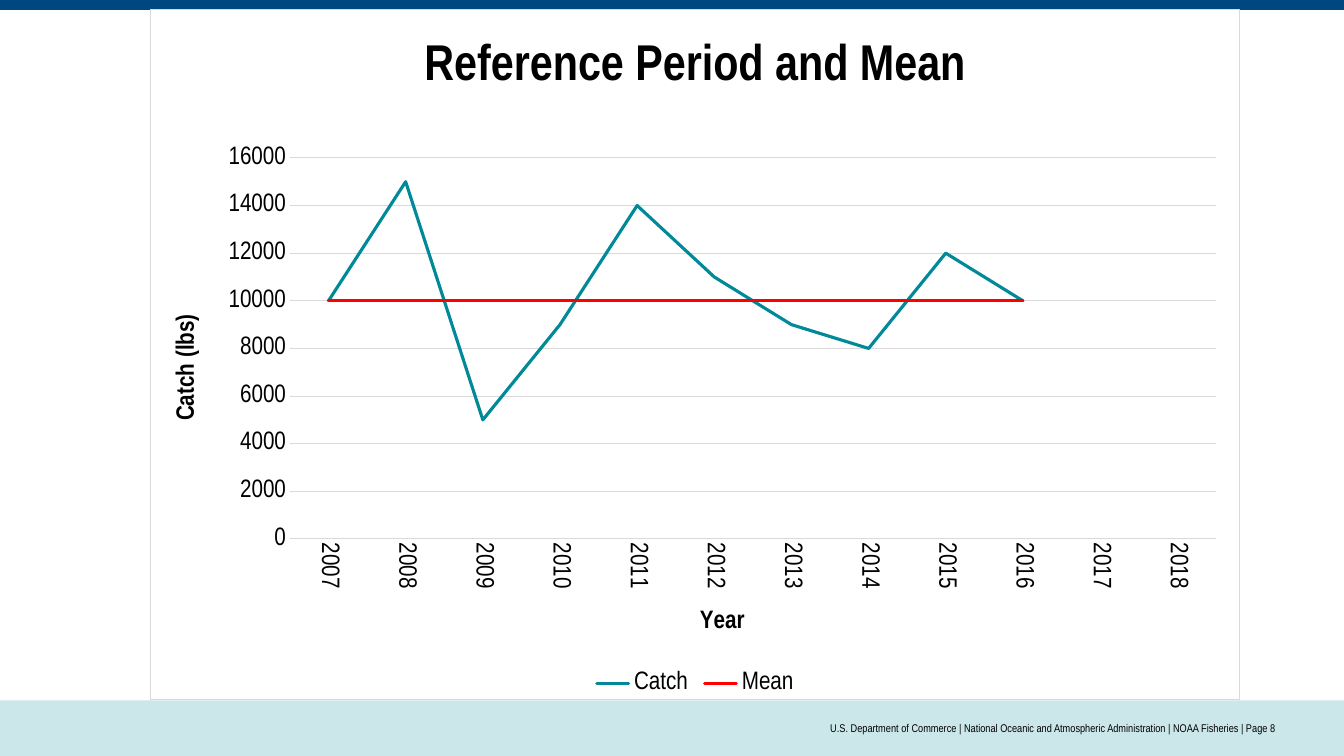
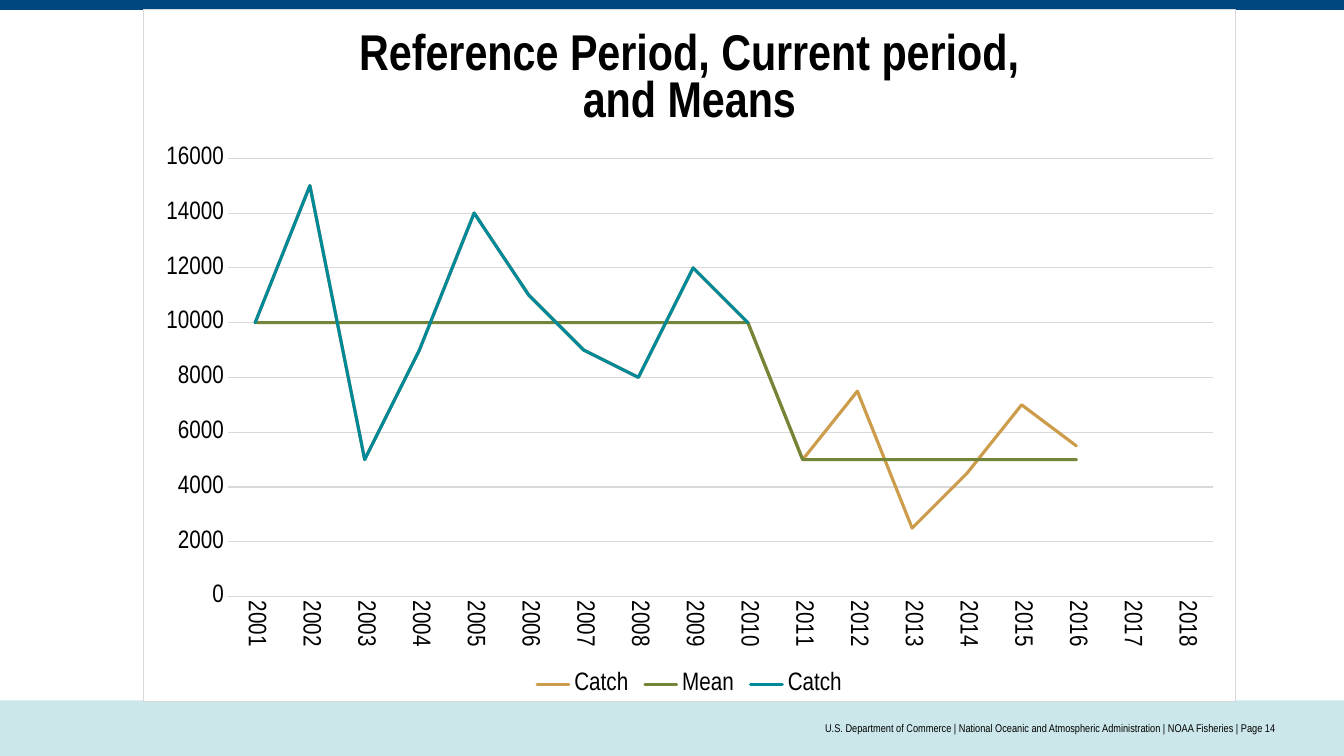
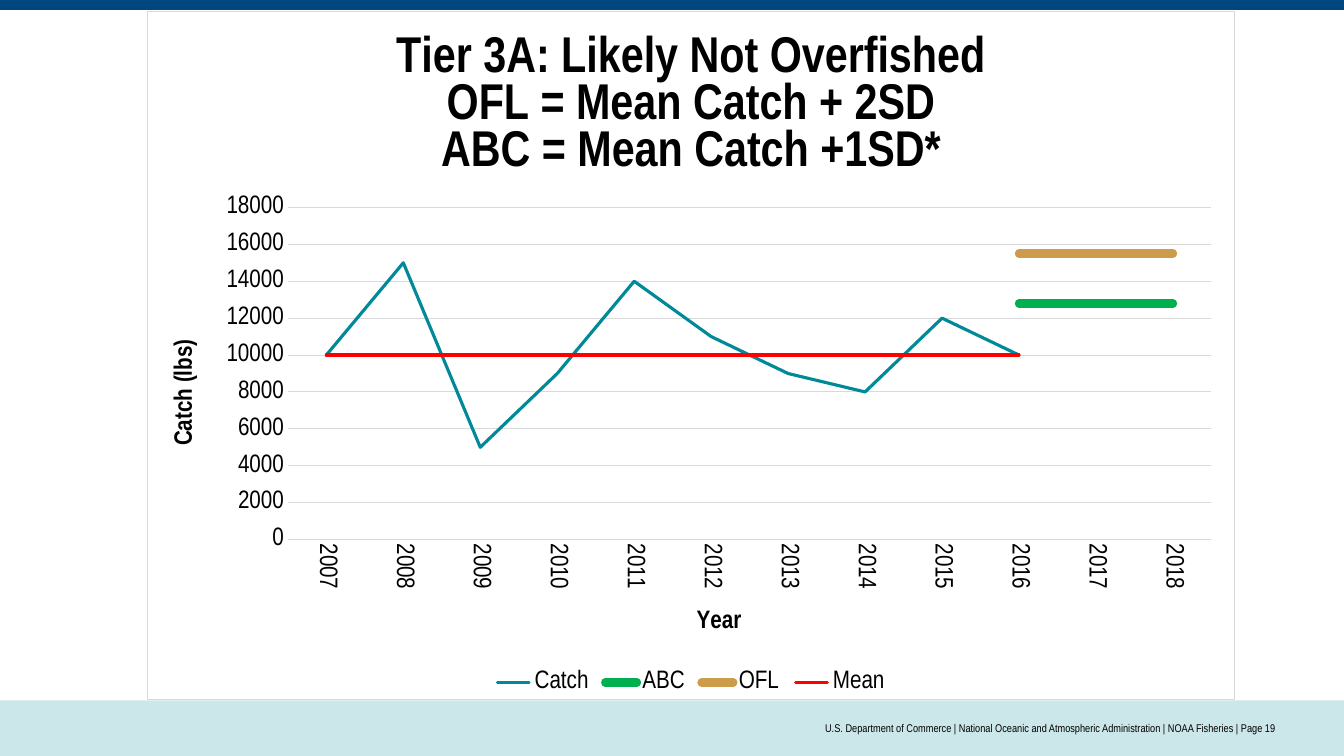
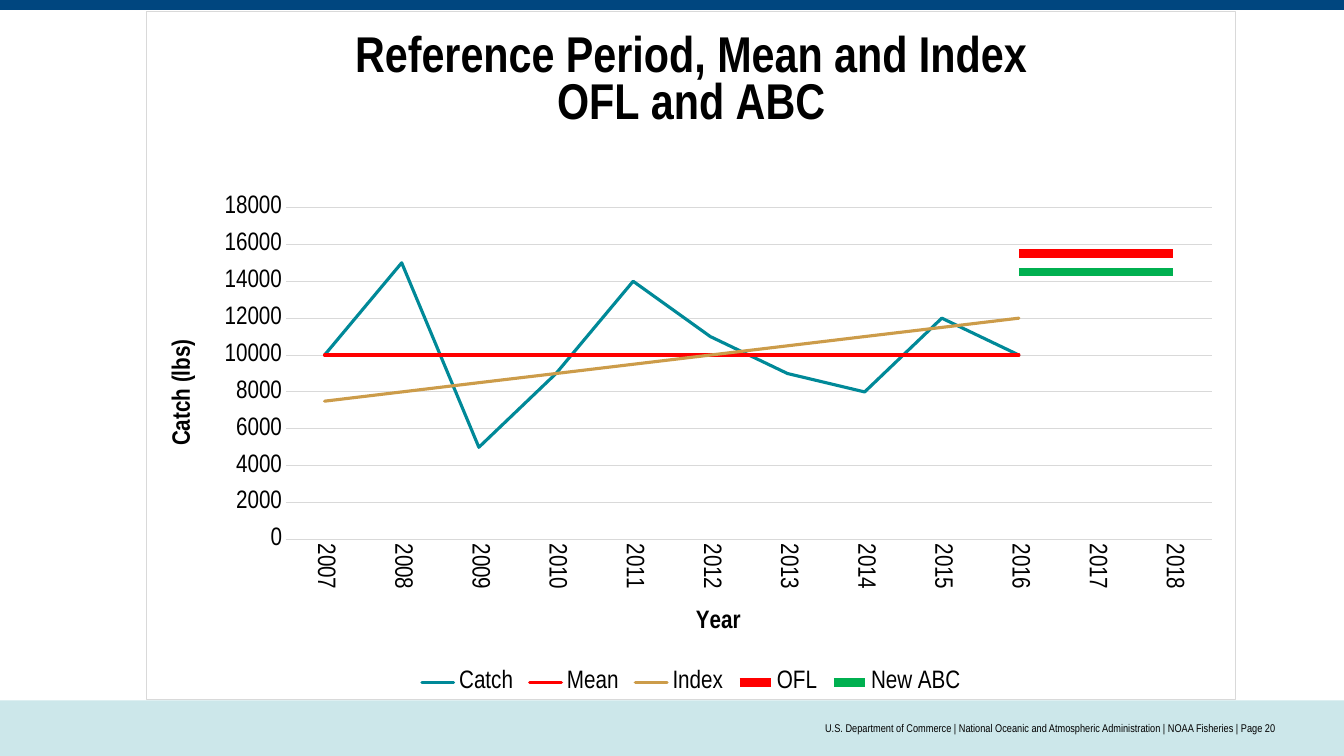
from lxml import etree
from pptx import Presentation
from pptx import util as u
from pptx.chart import data as chart_data
from pptx.dml.color import RGBColor
from pptx.enum import chart as ch, shapes, text
from pptx.oxml import ns

NAVY = RGBColor(0x00, 0x46, 0x7F)
PALE_TEAL = RGBColor(0xCC, 0xE7, 0xEA)
TEAL = RGBColor(0x00, 0x89, 0x98)
RED = RGBColor(0xFF, 0x00, 0x00)
GREEN = RGBColor(0x00, 0xB0, 0x50)
OLIVE = RGBColor(0x73, 0x85, 0x39)
OCHRE = RGBColor(0xCC, 0x9C, 0x4A)
GRID_GREY = RGBColor(0xD9, 0xD9, 0xD9)
WHITE = RGBColor(0xFF, 0xFF, 0xFF)
BLACK = RGBColor(0x00, 0x00, 0x00)

FONT = "Arial Narrow"
SLIDE_W, SLIDE_H = 33.87, 19.05
FOOTER_TOP, FOOTER_H = 17.65, 1.4
THIN, NORMAL, THICK = 0.75, 2.25, 6

TITLE_FONT = {"name": FONT, "size": u.Pt(36), "bold": True}
AXIS_TITLE_FONT = {"name": FONT, "size": u.Pt(18), "bold": True}
CHART_FONT = {"name": FONT, "size": u.Pt(18), "bold": False}
FOOTER_FONT = {"name": FONT, "size": u.Pt(8)}

# Catch data in pounds
CATCH = [10000, 15000, 5000, 9000, 14000, 11000, 9000, 8000, 12000, 10000]
CURRENT_CATCH = [5000, 7500, 2500, 4500, 7000, 5500]
MEAN = [10000] * 10
CURRENT_MEAN = [5000] * 6
INDEX = list(range(7500, 12001, 500))


def limit(value):
    """A level that holds for the last three of twelve years."""
    return [None] * 9 + [value] * 3


# Series: name, values, colour, width, line cap
CATCH_LINE = ("Catch", CATCH, TEAL, NORMAL, "rnd")
MEAN_LINE = ("Mean", MEAN, RED, NORMAL, "rnd")

# box: left, top, width, height in cm; plot: the same as shares of the box
CHART_SLIDES = [
    {"page": 8, "title": ["Reference Period and Mean"],
     "box": (3.78, 0.23, 27.48, 17.42), "plot": (0.128, 0.215, 0.85, 0.552),
     "first_year": 2007, "top_value": 16000, "axis_titles": True,
     "series": [CATCH_LINE, MEAN_LINE]},
    {"page": 14, "title": ["Reference Period, Current period,", "and Means"],
     "box": (3.61, 0.23, 27.53, 17.45), "plot": (0.077, 0.215, 0.903, 0.634),
     "first_year": 2001, "top_value": 16000, "axis_titles": False,
     "series": [("Catch", CATCH + CURRENT_CATCH, OCHRE, NORMAL, "rnd"),
                ("Mean", MEAN + CURRENT_MEAN, OLIVE, NORMAL, "rnd"),
                CATCH_LINE]},
    {"page": 19, "title": ["Tier 3A: Likely Not Overfished",
                           "OFL = Mean Catch + 2SD",
                           "ABC = Mean Catch +1SD*"],
     "box": (3.71, 0.28, 27.41, 17.35), "plot": (0.129, 0.285, 0.85, 0.483),
     "first_year": 2007, "top_value": 18000, "axis_titles": True,
     "series": [CATCH_LINE,
                ("ABC", limit(12800), GREEN, THICK, "rnd"),
                ("OFL", limit(15500), OCHRE, THICK, "rnd"),
                MEAN_LINE]},
    {"page": 20, "title": ["Reference Period, Mean and Index", "OFL and ABC"],
     "box": (3.68, 0.28, 27.48, 17.35), "plot": (0.128, 0.285, 0.85, 0.483),
     "first_year": 2007, "top_value": 18000, "axis_titles": True,
     "series": [CATCH_LINE, MEAN_LINE,
                ("Index", INDEX, OCHRE, NORMAL, "rnd"),
                ("OFL", limit(15500), RED, THICK, "flat"),
                ("New ABC", limit(14500), GREEN, THICK, "flat")]},
]


def apply(target, formats):
    for name, value in formats.items():
        setattr(target, name, value)


def style_font(font, formats, color=BLACK):
    apply(font, formats)
    font.color.rgb = color


def style_line(line, color, width):
    line.color.rgb = color
    line.width = u.Pt(width)


def add_master_bands(master, slide):
    """Draw the top and footer bands, then move them to the master."""
    for top, height, color in ((FOOTER_TOP, FOOTER_H, PALE_TEAL), (0, 0.25, NAVY)):
        band = slide.shapes.add_shape(shapes.MSO_SHAPE.RECTANGLE, 0, u.Cm(top),
                                      u.Cm(SLIDE_W), u.Cm(height))
        band.shadow.inherit = False
        band.fill.solid()
        band.fill.fore_color.rgb = color
        band.line.fill.background()
        master.shapes.element.insert(2, band.element)


def add_footer(slide, page):
    frame = slide.shapes.add_textbox(u.Cm(8.47), u.Cm(FOOTER_TOP),
                                     u.Cm(23.7), u.Cm(FOOTER_H)).text_frame
    apply(frame, {"word_wrap": True, "margin_left": 0, "margin_right": 0,
                  "vertical_anchor": text.MSO_ANCHOR.MIDDLE})
    line = frame.paragraphs[0]
    line.alignment = text.PP_ALIGN.RIGHT
    run = line.add_run()
    run.text = " | ".join(["U.S. Department of Commerce",
                           "National Oceanic and Atmospheric Administration",
                           "NOAA Fisheries", f"Page {page}"])
    style_font(run.font, FOOTER_FONT)


def write_title(titled, lines, formats):
    """Write the title of a chart or of an axis."""
    titled.has_title = True
    title = titled.chart_title if hasattr(titled, "chart_title") else titled.axis_title
    frame = title.text_frame
    for i, words in enumerate(lines):
        paragraph = frame.paragraphs[0] if i == 0 else frame.add_paragraph()
        run = paragraph.add_run()
        run.text = words
        style_font(run.font, formats)


def frame_chart(chart):
    """Give the chart a white ground and a thin grey border."""
    border = etree.fromstring(
        f'<c:spPr {ns.nsdecls("c", "a")}>'
        f'<a:solidFill><a:srgbClr val="{WHITE}"/></a:solidFill>'
        f'<a:ln w="{u.Pt(THIN)}"><a:solidFill><a:srgbClr val="{GRID_GREY}"/>'
        '</a:solidFill></a:ln></c:spPr>')
    chart.element.xpath("c:chart")[0].addnext(border)


def place_plot(chart, plot_box):
    """Fix the inner plot area within the chart."""
    area = chart.element.xpath("c:chart/c:plotArea")[0]
    for old in area.xpath("c:layout"):
        area.remove(old)
    sizes = "".join(f'<c:{key} val="{share}"/>' for key, share in zip("xywh", plot_box))
    area.insert(0, etree.fromstring(
        f'<c:layout {ns.nsdecls("c")}><c:manualLayout><c:layoutTarget val="inner"/>'
        f'<c:xMode val="edge"/><c:yMode val="edge"/>{sizes}</c:manualLayout></c:layout>'))


def style_axes(chart, top_value, with_titles):
    years, pounds = chart.category_axis, chart.value_axis
    for axis, label in ((years, "Year"), (pounds, "Catch (lbs)")):
        apply(axis, {"major_tick_mark": ch.XL_TICK_MARK.NONE,
                     "minor_tick_mark": ch.XL_TICK_MARK.NONE})
        style_font(axis.tick_labels.font, CHART_FONT)
        if with_titles:
            write_title(axis, [label], AXIS_TITLE_FONT)
        else:
            axis.has_title = False
    style_line(years.format.line, GRID_GREY, THIN)
    apply(pounds, {"minimum_scale": 0, "maximum_scale": top_value, "major_unit": 2000,
                   "has_major_gridlines": True})
    style_line(pounds.major_gridlines.format.line, GRID_GREY, THIN)
    pounds.format.line.fill.background()
    # Years read downwards
    chart.element.xpath(".//c:catAx/c:txPr/a:bodyPr")[0].set("rot", "5400000")


def add_catch_chart(slide, content):
    """Place one line chart of yearly catch in its box."""
    first = content["first_year"]
    catch_data = chart_data.CategoryChartData()
    catch_data.categories = [str(year) for year in range(first, 2019)]
    for name, values, *_ in content["series"]:
        missing = 2019 - first - len(values)
        catch_data.add_series(name, values + [None] * missing)
    box = [u.Cm(length) for length in content["box"]]
    chart = slide.shapes.add_chart(ch.XL_CHART_TYPE.LINE, *box, catch_data).chart

    style_font(chart.font, CHART_FONT)
    frame_chart(chart)
    write_title(chart, content["title"], TITLE_FONT)
    place_plot(chart, content["plot"])
    style_axes(chart, content["top_value"], content["axis_titles"])

    # Lines
    plot = chart.plots[0]
    plot.vary_by_categories = False
    for series, (_, _, color, width, _) in zip(plot.series, content["series"]):
        series.smooth = False
        style_line(series.format.line, color, width)
    outlines = chart.element.xpath(".//c:ser/c:spPr/a:ln")
    for outline, (*_, cap) in zip(outlines, content["series"]):
        outline.set("cap", cap)
        etree.SubElement(outline, ns.qn("a:round"))

    # Legend
    chart.has_legend = True
    apply(chart.legend, {"position": ch.XL_LEGEND_POSITION.BOTTOM,
                         "include_in_layout": False})
    style_font(chart.legend.font, CHART_FONT)


def main():
    deck = Presentation()
    apply(deck, {"slide_width": u.Cm(SLIDE_W), "slide_height": u.Cm(SLIDE_H)})
    blank = deck.slide_layouts[6]
    for i, content in enumerate(CHART_SLIDES):
        slide = deck.slides.add_slide(blank)
        if i == 0:
            add_master_bands(deck.slide_master, slide)
        add_footer(slide, content["page"])
        add_catch_chart(slide, content)
    deck.save("out.pptx")


if __name__ == "__main__":
    main()
